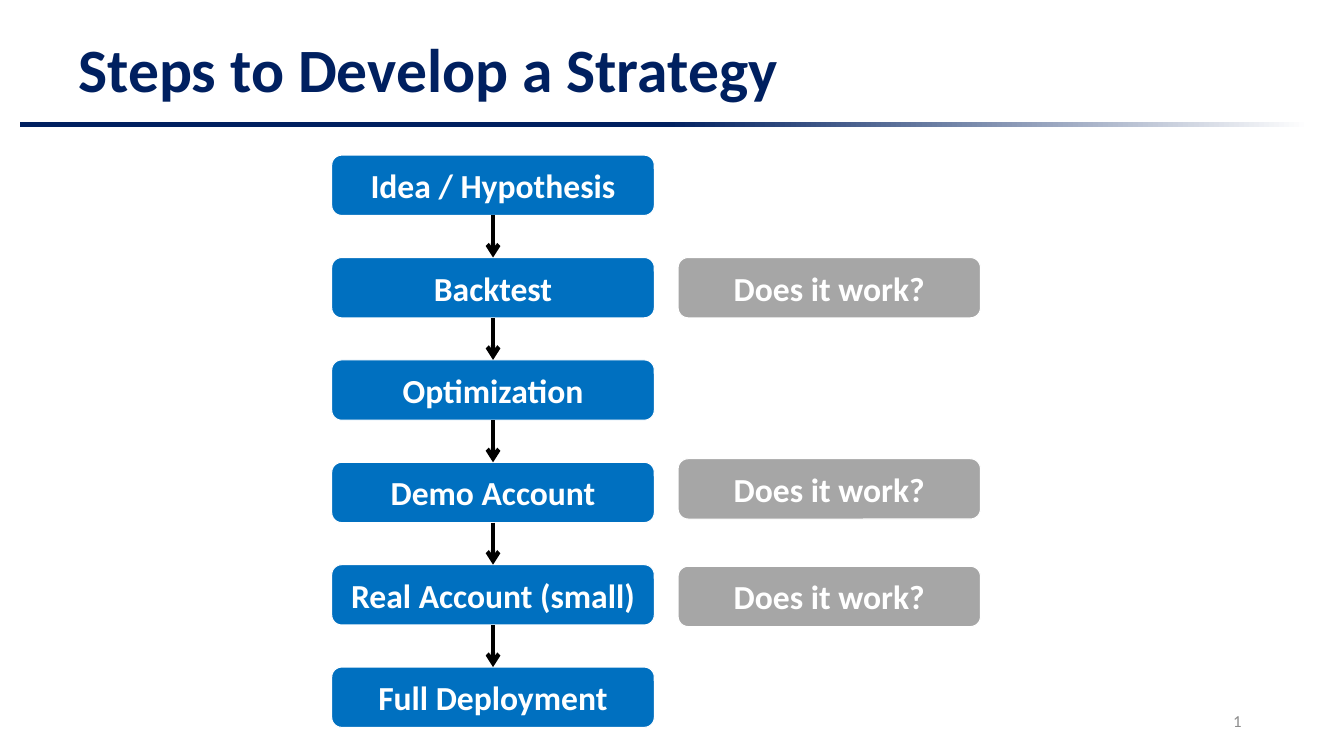
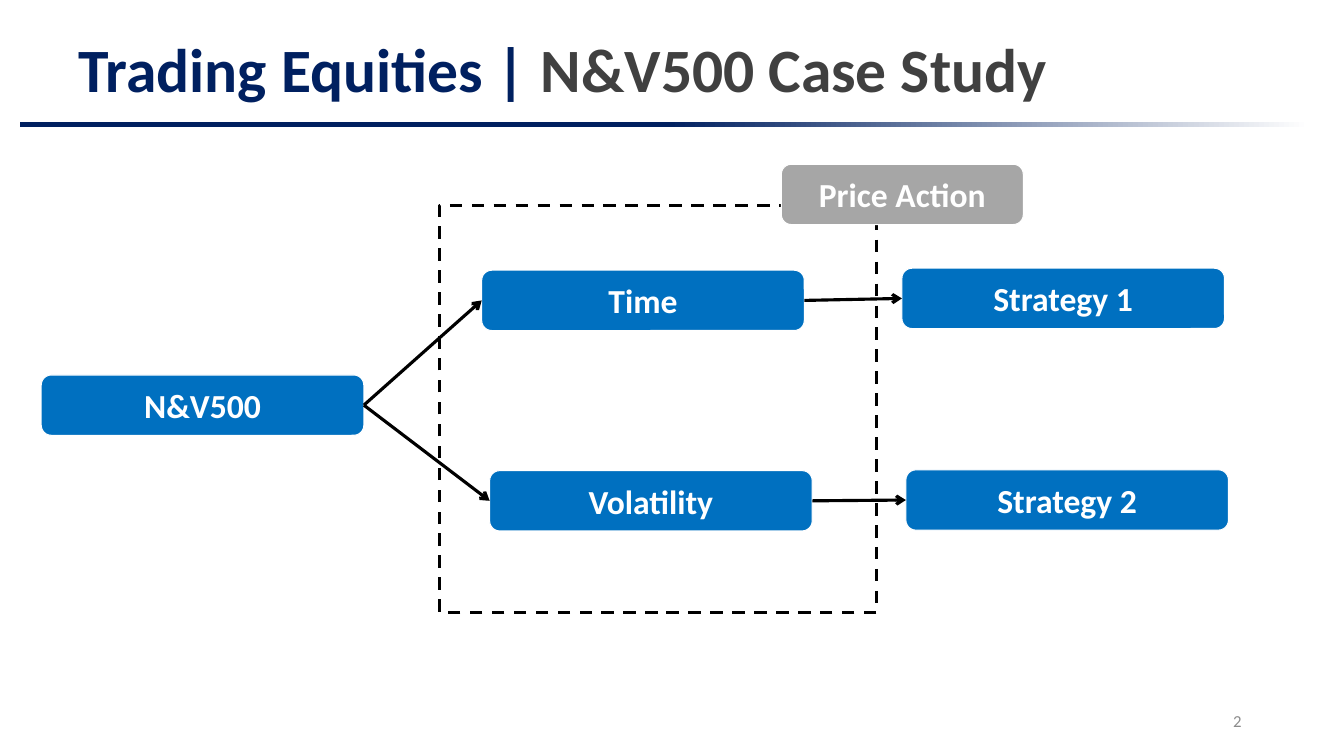
import copy

import lxml.etree
import pptx
import pptx.dml.color
import pptx.enum.dml
import pptx.enum.shapes
import pptx.enum.text
import pptx.oxml
import pptx.oxml.ns
import pptx.util
from pptx.util import Cm

COLOURS = {
    "navy": "002060",
    "blue": "0070C0",
    "grey": "A6A6A6",
    "dark": "404040",
    "number": "8C8C8C",
    "black": "000000",
    "white": "FFFFFF",
}
FONT = "Calibri"
BLOCK_WIDTH, BLOCK_HEIGHT = 8.13, 1.52
TOP, LEFT, BOTTOM, RIGHT = range(4)
SHAPES = pptx.enum.shapes.MSO_SHAPE
ALIGN = pptx.enum.text.PP_ALIGN
MIDDLE = pptx.enum.text.MSO_ANCHOR.MIDDLE


def colour(name):
    return pptx.dml.color.RGBColor.from_string(COLOURS[name])


def set_font(font, size, bold=False, name=None):
    font.name = FONT
    font.size = pptx.util.Pt(size)
    font.bold = bold
    if name:
        font.color.rgb = colour(name)


def add_plain_shape(slide, kind, left, top, width, height):
    shape = slide.shapes.add_shape(kind, Cm(left), Cm(top), Cm(width), Cm(height))
    shape.shadow.inherit = False
    return shape


def add_text_box(slide, left, top, width, height):
    box = slide.shapes.add_textbox(Cm(left), Cm(top), Cm(width), Cm(height))
    box.text_frame.word_wrap = True
    box.text_frame.vertical_anchor = MIDDLE
    return box.text_frame.paragraphs[0]


def add_title_rule(slide, left, top, width, height):
    rule = add_plain_shape(slide, SHAPES.RECTANGLE, left, top, width, height)
    rule.line.fill.background()
    rule.fill.gradient()
    rule.fill.gradient_angle = 0
    first_stop = rule._element.find(".//" + pptx.oxml.ns.qn("a:gs"))
    first_stop.addnext(copy.deepcopy(first_stop))
    stops = ((0, "navy"), (0.5, "navy"), (1, "white"))
    for stop, (position, name) in zip(rule.fill.gradient_stops, stops):
        stop.position = position
        stop.color.rgb = colour(name)


def add_title(slide, parts, left, top, width, height):
    paragraph = add_text_box(slide, left, top, width, height)
    paragraph.line_spacing = 0.9
    set_font(paragraph.font, 44, bold=True)
    for text, name in parts:
        run = paragraph.add_run()
        run.text = text
        run.font.color.rgb = colour(name)


def add_slide_number(slide, number, left, top, width, height):
    paragraph = add_text_box(slide, left, top, width, height)
    paragraph.alignment = ALIGN.RIGHT
    run = paragraph.add_run()
    run.text = str(number)
    set_font(run.font, 12, name="number")
    field = run._r
    field.tag = pptx.oxml.ns.qn("a:fld")
    field.set("id", "{B6F15528-21DE-4FAA-801E-634DDDAF4B2B}")
    field.set("type", "slidenum")


def add_titled_slide(presentation, title_parts):
    slide = presentation.slides.add_slide(presentation.slide_layouts[6])
    add_title_rule(slide, 0.5, 3.07, 32.5, 0.13)
    add_title(slide, title_parts, 1.73, 0, 29.2, 3.68)
    add_slide_number(slide, len(presentation.slides), 23.92, 17.65, 7.62, 1.02)
    return slide


def add_block(slide, text, left, top, width=BLOCK_WIDTH, fill="blue"):
    block = add_plain_shape(
        slide, SHAPES.ROUNDED_RECTANGLE, left, top, width, BLOCK_HEIGHT
    )
    block.fill.solid()
    block.fill.fore_color.rgb = colour(fill)
    block.line.color.rgb = colour("white")
    block.line.width = pptx.util.Pt(0.75)
    frame = block.text_frame
    frame.margin_left = frame.margin_right = 0
    frame.margin_top = frame.margin_bottom = 0
    frame.word_wrap = True
    frame.vertical_anchor = MIDDLE
    paragraph = frame.paragraphs[0]
    paragraph.text = text
    paragraph.alignment = ALIGN.CENTER
    set_font(paragraph.font, 24, bold=True, name="white")
    return block


def add_arrow(slide, source, source_side, target, target_side, width):
    arrow = slide.shapes.add_connector(
        pptx.enum.shapes.MSO_CONNECTOR.STRAIGHT, 0, 0, 0, 0
    )
    arrow.begin_connect(source, source_side)
    arrow.end_connect(target, target_side)
    arrow.line.color.rgb = colour("black")
    arrow.line.width = pptx.util.Pt(width)
    qn = pptx.oxml.ns.qn
    line = arrow.line._get_or_add_ln()
    lxml.etree.SubElement(line, qn("a:tailEnd"), type="arrow")
    lxml.etree.SubElement(arrow._element.spPr, qn("a:effectLst"))


def add_step_chain(slide, steps, left, top, pitch):
    blocks = [
        add_block(slide, step, left, top + index * pitch)
        for index, step in enumerate(steps)
    ]
    for source, target in zip(blocks, blocks[1:]):
        add_arrow(slide, source, BOTTOM, target, TOP, 3)


def add_checks(slide, text, left, tops):
    for top in tops:
        add_block(slide, text, left, top, width=7.62, fill="grey")


def add_dashed_frame(slide, left, top, width, height):
    frame = add_plain_shape(slide, SHAPES.RECTANGLE, left, top, width, height)
    frame.fill.background()
    frame.line.color.rgb = colour("black")
    frame.line.width = pptx.util.Pt(2.25)
    frame.line.dash_style = pptx.enum.dml.MSO_LINE.DASH


def add_case_study(slide, left, top):
    market = add_block(slide, "N&V500", left, top + 5.31)
    time = add_block(slide, "Time", left + 11.1, top + 2.67)
    volatility = add_block(slide, "Volatility", left + 11.3, top + 7.72)
    add_dashed_frame(slide, left + 10.03, top + 1.04, 11.02, 10.26)
    add_block(slide, "Price Action", left + 18.65, top, width=6.1, fill="grey")
    first = add_block(slide, "Strategy 1", left + 21.69, top + 2.62)
    second = add_block(slide, "Strategy 2", left + 21.79, top + 7.7)
    links = (
        (market, time),
        (market, volatility),
        (time, first),
        (volatility, second),
    )
    for source, target in links:
        add_arrow(slide, source, RIGHT, target, LEFT, 2.25)


def build_steps_slide(presentation):
    slide = add_titled_slide(
        presentation, [("Steps to Develop a Strategy", "navy")]
    )
    steps = (
        "Idea / Hypothesis",
        "Backtest",
        "Optimization",
        "Demo Account",
        "Real Account (small)",
        "Full Deployment",
    )
    add_step_chain(slide, steps, 8.36, 3.91, 2.58)
    add_checks(slide, "Does it work?", 17.09, (6.49, 11.56, 14.27))


def build_case_study_slide(presentation):
    slide = add_titled_slide(
        presentation,
        [("Trading Equities | ", "navy"), ("N&V500 Case Study", "dark")],
    )
    add_case_study(slide, 1.04, 4.14)


def main():
    presentation = pptx.Presentation()
    presentation.slide_width = Cm(33.87)
    presentation.slide_height = Cm(19.05)
    build_steps_slide(presentation)
    build_case_study_slide(presentation)
    presentation.save("out.pptx")


if __name__ == "__main__":
    main()
